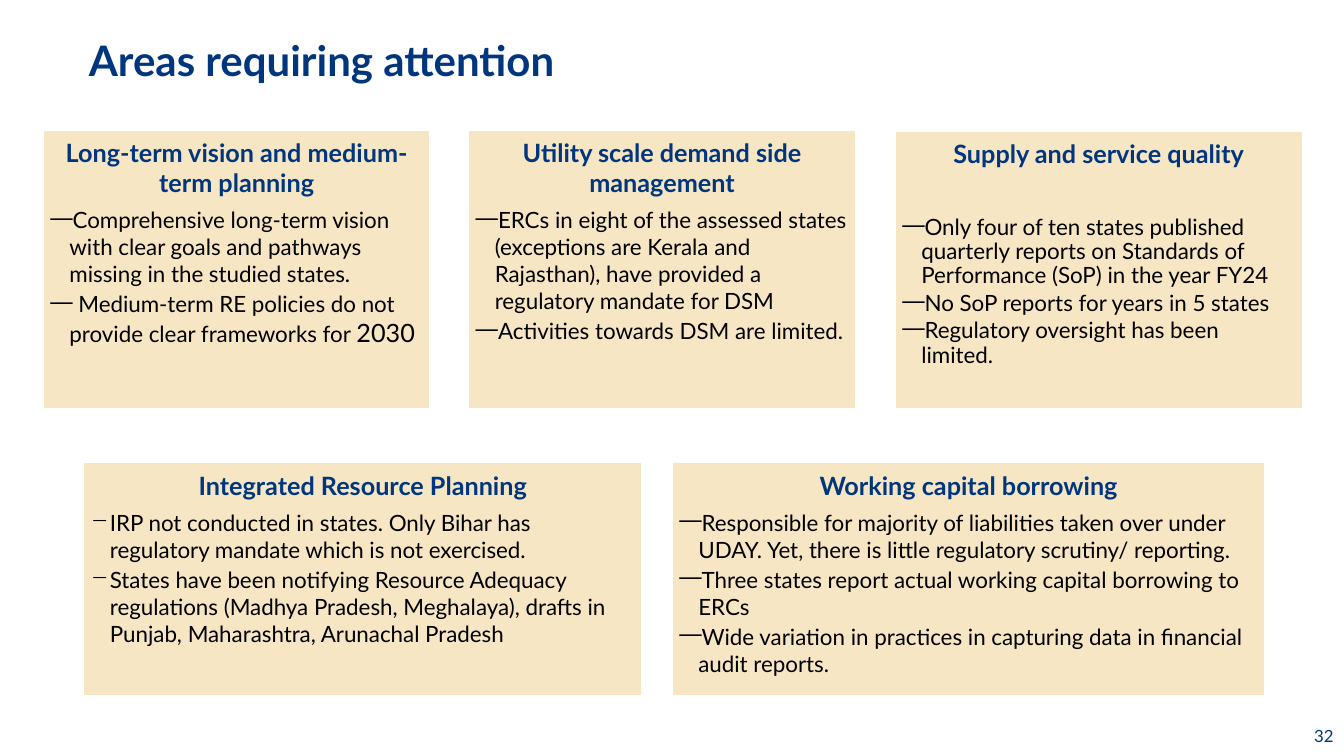
from dataclasses import dataclass

from lxml import etree
from pptx import Presentation
from pptx import util as u
from pptx.dml.color import RGBColor
from pptx.enum import shapes, text
from pptx.oxml import ns


@dataclass(frozen=True)
class Theme:
    font: str = "Lato"
    navy: str = "00367E"
    sand: str = "F6E6C4"
    black: str = "000000"
    white: str = "FFFFFF"
    title: float = 30
    heading: float = 18
    body: float = 16
    page: float = 12
    heading_gap: float = 6.3
    item_gap: float = 2.4


@dataclass(frozen=True)
class Card:
    left: float
    top: float
    width: float
    height: float
    heading: str
    items: tuple
    bullet: str = "—"
    heading_gap: float = Theme.heading_gap
    line_spacing: float = 1.0


THEME = Theme()
TOP_ROW, TOP_HEIGHT = 3.28, 7.01
BOTTOM_ROW, BOTTOM_HEIGHT = 11.66, 5.87

CARDS = (
    Card(1.09, TOP_ROW, 9.75, TOP_HEIGHT, "Long-term vision and medium-term planning", (
        "Comprehensive long-term vision with clear goals and pathways missing in the studied states.",
        " Medium-term RE policies do not provide clear frameworks for |2030",
    )),
    Card(11.81, TOP_ROW, 9.75, TOP_HEIGHT, "Utility scale demand side management", (
        "ERCs in eight of the assessed states (exceptions are Kerala and Rajasthan), "
        "have provided a regulatory mandate for DSM",
        "Activities towards DSM are limited.",
    )),
    Card(22.56, 3.3, 10.26, TOP_HEIGHT, "Supply and service quality", (
        "Only four of ten states published quarterly reports on Standards of "
        "Performance (SoP) in the year FY24",
        "No SoP reports for years in 5 states",
        "Regulatory oversight has been limited.",
    ), heading_gap=34.2, line_spacing=0.9),
    Card(2.11, BOTTOM_ROW, 14.07, BOTTOM_HEIGHT, "Integrated Resource Planning", (
        "IRP not conducted in states. Only Bihar has regulatory mandate which is not exercised.",
        "States have been notifying Resource Adequacy regulations (Madhya Pradesh, Meghalaya), "
        "drafts in Punjab, Maharashtra, Arunachal Pradesh",
    ), bullet="─"),
    Card(16.94, BOTTOM_ROW, 14.94, BOTTOM_HEIGHT, "Working capital borrowing", (
        "Responsible for majority of liabilities taken over under UDAY. "
        "Yet, there is little regulatory scrutiny/ reporting.",
        "Three states report actual working capital borrowing to ERCs",
        "Wide variation in practices in capturing data in financial audit reports.",
    )),
)


def rgb(value):
    return RGBColor.from_string(value)


def write(paragraph, content, size, color=THEME.navy, bold=False, align=text.PP_ALIGN.LEFT):
    paragraph.alignment = align
    run = paragraph.add_run()
    run.text = content
    run.font.name = THEME.font
    run.font.size = u.Pt(size)
    run.font.bold = bold
    run.font.color.rgb = rgb(color)


def set_frame(frame, inset, anchor):
    frame.word_wrap = True
    frame.auto_size = text.MSO_AUTO_SIZE.NONE
    frame.vertical_anchor = anchor
    frame.margin_left = frame.margin_right = u.Cm(inset)
    frame.margin_top = frame.margin_bottom = u.Cm(inset)


def set_bullet(paragraph, character):
    properties = paragraph._p.get_or_add_pPr()
    properties.set("marL", str(u.Cm(0.48)))
    properties.set("indent", str(-u.Cm(0.48)))
    etree.SubElement(properties, ns.qn("a:buChar")).set("char", character)


def add_title(slide, content):
    title = slide.shapes.title
    title.left, title.top = u.Cm(2.24), u.Cm(0.1)
    title.width, title.height = u.Cm(25.88), u.Cm(1.78)
    set_frame(title.text_frame, 0, text.MSO_ANCHOR.TOP)
    paragraph = title.text_frame.paragraphs[0]
    paragraph.line_spacing = u.Pt(57.5)
    write(paragraph, content, THEME.title, bold=True)


def add_card(slide, card):
    bounds = map(u.Cm, (card.left, card.top, card.width, card.height))
    shape = slide.shapes.add_shape(shapes.MSO_SHAPE.RECTANGLE, *bounds)
    shape.shadow.inherit = False
    shape.fill.solid()
    shape.fill.fore_color.rgb = rgb(THEME.sand)
    shape.line.color.rgb = rgb(THEME.white)
    shape.line.width = u.Pt(1)
    frame = shape.text_frame
    set_frame(frame, 0.18, text.MSO_ANCHOR.TOP)
    heading = frame.paragraphs[0]
    heading.space_after = u.Pt(card.heading_gap)
    write(heading, card.heading, THEME.heading, bold=True, align=text.PP_ALIGN.CENTER)
    for item in card.items:
        paragraph = frame.add_paragraph()
        set_bullet(paragraph, card.bullet)
        paragraph.line_spacing = card.line_spacing
        paragraph.space_after = u.Pt(THEME.item_gap)
        for part, size in zip(item.split("|"), (THEME.body, THEME.heading)):
            write(paragraph, part, size, color=THEME.black)


def add_page_number(slide, number):
    box = slide.shapes.add_textbox(u.Cm(26.24), u.Cm(18.03), u.Cm(7.62), u.Cm(1.02))
    set_frame(box.text_frame, 0.25, text.MSO_ANCHOR.MIDDLE)
    write(box.text_frame.paragraphs[0], number, THEME.page, align=text.PP_ALIGN.RIGHT)


def main():
    presentation = Presentation()
    presentation.slide_width, presentation.slide_height = u.Cm(33.87), u.Cm(19.05)
    slide = presentation.slides.add_slide(presentation.slide_layouts.get_by_name("Title Only"))
    add_title(slide, "Areas requiring attention")
    for card in CARDS:
        add_card(slide, card)
    add_page_number(slide, "32")
    presentation.save("out.pptx")


if __name__ == "__main__":
    main()
